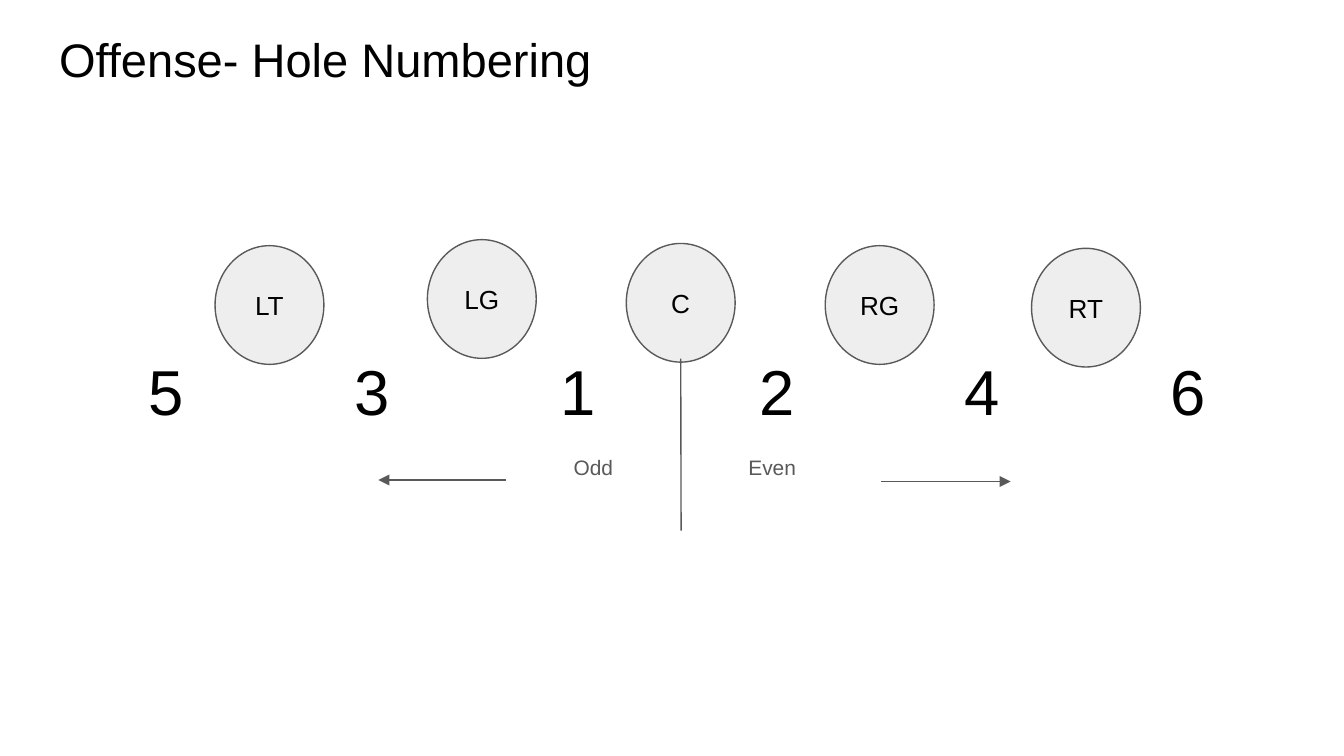
from dataclasses import dataclass

from lxml import etree
from pptx import Presentation
from pptx.dml.color import RGBColor
from pptx.enum.shapes import MSO_CONNECTOR, MSO_SHAPE
from pptx.enum.text import MSO_ANCHOR, MSO_AUTO_SIZE, PP_ALIGN
from pptx.oxml.ns import qn
from pptx.util import Inches, Pt

STRAIGHT = MSO_CONNECTOR.STRAIGHT
OVAL = MSO_SHAPE.OVAL
TOP, MIDDLE = MSO_ANCHOR.TOP, MSO_ANCHOR.MIDDLE
NO_AUTOFIT = MSO_AUTO_SIZE.NONE
LEFT, CENTER, RIGHT = PP_ALIGN.LEFT, PP_ALIGN.CENTER, PP_ALIGN.RIGHT

WIDTH = Inches(10)
HEIGHT = WIDTH * 9 // 16
FONT = "Arial"
BLACK, GRAY, PALE = "000000", "595959", "EEEEEE"
TITLE_ONLY = 5


@dataclass(frozen=True)
class Area:
    """A rectangle in percent of the slide's width and height."""
    left: float
    top: float
    width: float
    height: float

    def lengths(self) -> tuple[int, int, int, int]:
        return (across(self.left), down(self.top),
                across(self.width), down(self.height))


@dataclass(frozen=True)
class Lineman:
    label: str
    left: float
    top: float


@dataclass(frozen=True)
class Side:
    """One half of the line: its holes run from left to right."""
    name: str
    name_left: float
    alignment: PP_ALIGN
    holes: str
    first_hole: float
    arrow: tuple[float, float]
    arrow_top: float


LINEMEN = [
    Lineman("LT", 16, 32.5),
    Lineman("LG", 31.8, 31.7),
    Lineman("C", 46.6, 32.2),
    Lineman("RG", 61.4, 32.5),
    Lineman("RT", 76.75, 32.85),
]
SIDES = [
    Side("Odd", -0.2, RIGHT, "531", 10.1, (37.65, 28.15), 63.5),
    Side("Even", 54.7, LEFT, "246", 55.5, (65.55, 75.2), 63.7),
]
HOLE_STEP = 15.3


def across(percent: float) -> int:
    return round(WIDTH * percent / 100)


def down(percent: float) -> int:
    return round(HEIGHT * percent / 100)


def color(value: str) -> RGBColor:
    return RGBColor.from_string(value)


def write(shape, text: str, size: float, ink: str = BLACK,
          alignment: PP_ALIGN = LEFT, anchor: MSO_ANCHOR = TOP):
    """Fill a shape with one paragraph and return that paragraph."""
    frame = shape.text_frame
    frame.auto_size = NO_AUTOFIT
    frame.word_wrap = True
    frame.vertical_anchor = anchor
    frame.margin_left = frame.margin_right = Inches(0.1)
    frame.margin_top = frame.margin_bottom = Inches(0.1)
    paragraph = frame.paragraphs[0]
    paragraph.alignment = alignment
    run = paragraph.add_run()
    run.text = text
    run.font.name = FONT
    run.font.size = Pt(size)
    run.font.color.rgb = color(ink)
    return paragraph


def add_title(slide, text: str) -> None:
    title = slide.shapes.title
    area = Area(3.4, 2.3, 93.2, 11.2)
    title.left, title.top, title.width, title.height = area.lengths()
    write(title, text, 25.2)


def add_lineman(slide, lineman: Lineman) -> None:
    area = Area(lineman.left, lineman.top, 8.1, 15.7)
    circle = slide.shapes.add_shape(OVAL, *area.lengths())
    circle.shadow.inherit = False
    circle.fill.solid()
    circle.fill.fore_color.rgb = color(PALE)
    circle.line.color.rgb = color(GRAY)
    circle.line.width = Pt(0.75)
    write(circle, lineman.label, 14, alignment=CENTER, anchor=MIDDLE)


def add_line(slide, start: tuple[float, float], end: tuple[float, float],
             arrow: bool = False) -> None:
    line = slide.shapes.add_connector(
        STRAIGHT, across(start[0]), down(start[1]), across(end[0]), down(end[1]))
    line.line.color.rgb = color(GRAY)
    line.line.width = Pt(0.75)
    properties = line._element.spPr
    if arrow:
        outline = properties.find(qn("a:ln"))
        etree.SubElement(outline, qn("a:tailEnd"), type="triangle")
    etree.SubElement(properties, qn("a:effectLst"))


def add_side(slide, side: Side) -> None:
    name_area = Area(side.name_left, 58.65, 46.8, 10.1)
    name_box = slide.shapes.add_textbox(*name_area.lengths())
    paragraph = write(name_box, side.name, 11.2, GRAY, side.alignment)
    paragraph.line_spacing = 0.95
    paragraph.space_after = Pt(12)
    for column, hole in enumerate(side.holes):
        area = Area(side.first_hole + column * HOLE_STEP, 44.85, 5.1, 13.7)
        write(slide.shapes.add_textbox(*area.lengths()), hole, 34)
    start, end = side.arrow
    add_line(slide, (start, side.arrow_top), (end, side.arrow_top), arrow=True)


def main() -> None:
    presentation = Presentation()
    presentation.slide_width, presentation.slide_height = WIDTH, HEIGHT
    slide = presentation.slides.add_slide(presentation.slide_layouts[TITLE_ONLY])
    add_title(slide, "Offense- Hole Numbering")
    for lineman in LINEMEN:
        add_lineman(slide, lineman)
    add_line(slide, (50.65, 47.45), (50.68, 70.2))
    for side in SIDES:
        add_side(slide, side)
    presentation.save("out.pptx")


if __name__ == "__main__":
    main()
